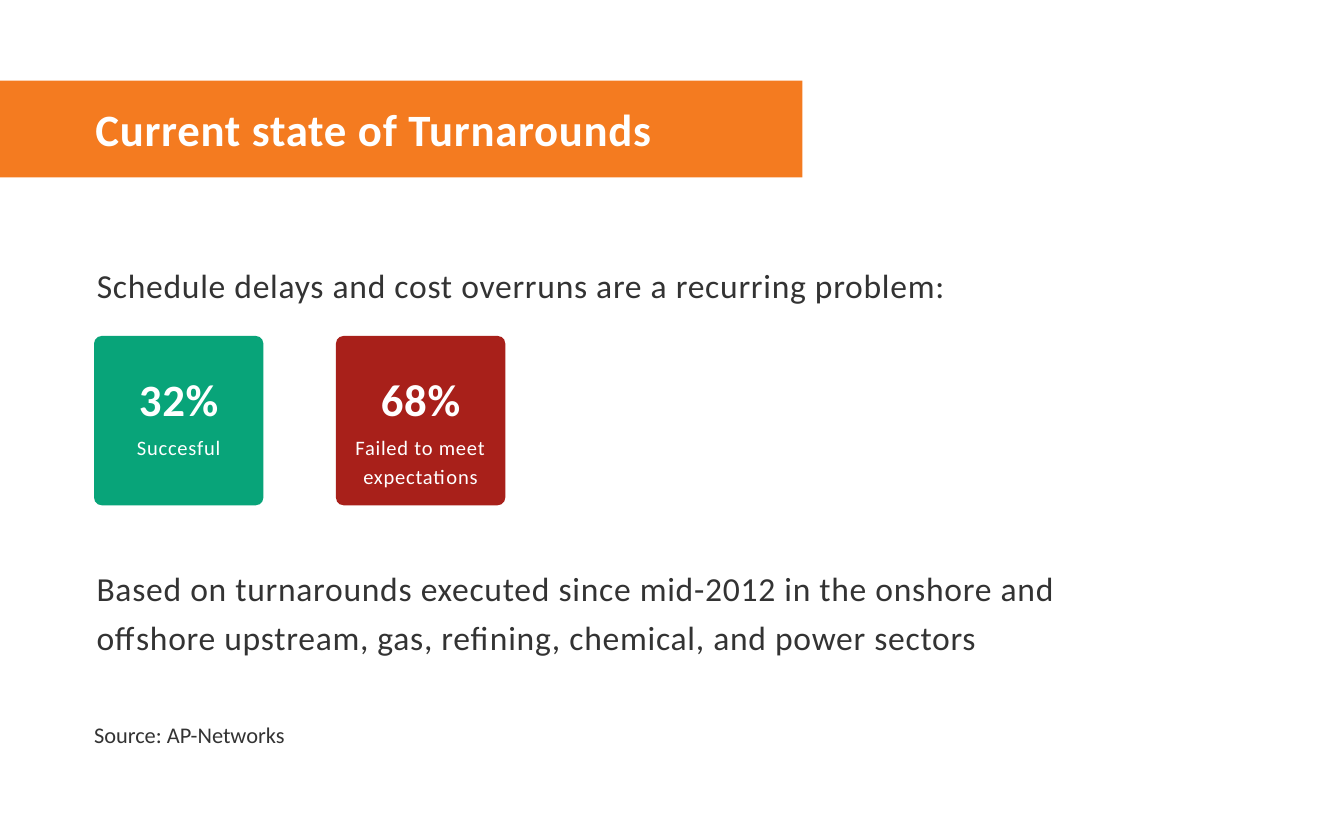
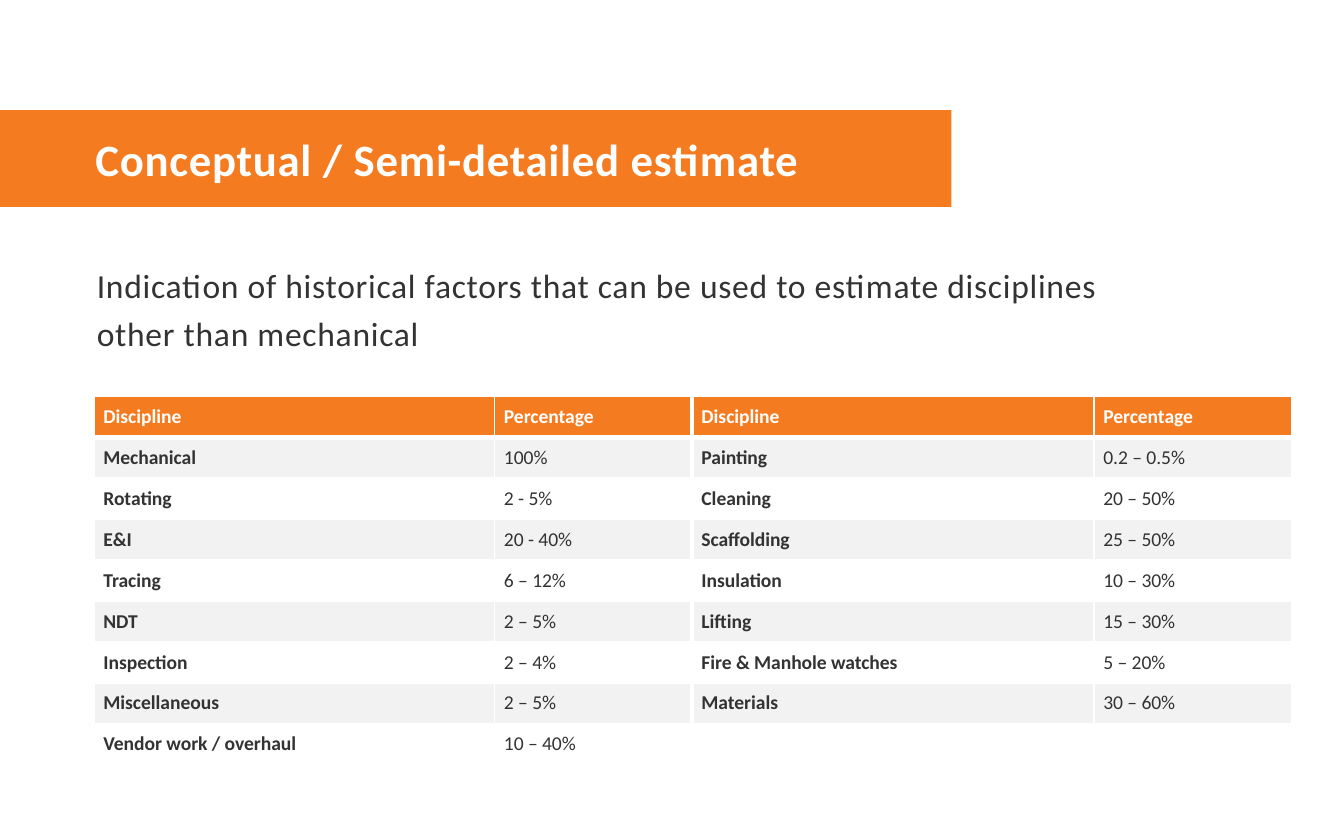
from dataclasses import dataclass

from lxml import etree
from pptx import Presentation
from pptx import util as u
from pptx.dml.color import RGBColor
from pptx.enum import shapes, text
from pptx.oxml.ns import qn

STATE = {
    "title": "Current state of Turnarounds",
    "intro": "Schedule delays and cost overruns are a recurring problem:",
    "cards": [("32%", "Succesful", "08A479"),
              ("68%", "Failed to meet expectations", "A8201A")],
    "basis": "Based on turnarounds executed since mid-2012 in the onshore and "
             "offshore upstream, gas, refining, chemical, and power sectors",
    "source": "Source: AP-Networks",
}
ESTIMATE = {
    "title": "Conceptual / Semi-detailed estimate",
    "intro": "Indication of historical factors that can be used to estimate "
             "disciplines other than mechanical",
    "rows": [
        ("Discipline", "Percentage", "Discipline", "Percentage"),
        ("Mechanical", "100%", "Painting", "0.2 – 0.5%"),
        ("Rotating", "2 - 5%", "Cleaning", "20 – 50%"),
        ("E&I", "20 - 40%", "Scaffolding", "25 – 50%"),
        ("Tracing", "6 – 12%", "Insulation", "10 – 30%"),
        ("NDT", "2 – 5%", "Lifting", "15 – 30%"),
        ("Inspection", "2 – 4%", "Fire & Manhole watches", "5 – 20%"),
        ("Miscellaneous", "2 – 5%", "Materials", "30 – 60%"),
        ("Vendor work / overhaul", "10 – 40%", "", ""),
    ],
}


@dataclass(frozen=True)
class Theme:
    font: str = "Calibri"
    accent: str = "F47B20"
    ink: str = "333333"
    paper: str = "FFFFFF"
    stripe: str = "F2F2F2"
    title: float = 24
    body: float = 18
    source: float = 12
    label: float = 11
    cell: float = 10.5
    spacing: str = "40"


T = Theme()
WIDTH, HEIGHT = 10, 6.25
MARGIN = 0.7
BODY_LEFT, BODY_TOP = 0.62, 1.86
BAND_HEIGHT = 0.72
CARD_TOP, CARD_SIZE, CARD_PITCH = 2.5, 1.26, 1.8
TABLE_TOP, TABLE_HEIGHT = 2.95, 2.74
COLUMNS = (2.98, 1.47, 2.99, 1.47)


def rgb(value):
    return RGBColor.from_string(value)


def place(sp, left, top, width, height):
    box = {"left": left, "top": top, "width": width, "height": height}
    for name, value in box.items():
        setattr(sp, name, u.Inches(value))


def set_frame(tf, wrap=True, insets=(0.1, 0.05, 0.1, 0.05),
              anchor=text.MSO_ANCHOR.TOP):
    left, top, right, bottom = map(u.Inches, insets)
    values = {"word_wrap": wrap, "auto_size": text.MSO_AUTO_SIZE.NONE,
              "vertical_anchor": anchor, "margin_left": left,
              "margin_top": top, "margin_right": right,
              "margin_bottom": bottom}
    for name, value in values.items():
        setattr(tf, name, value)


def write(p, words, size, color, bold=False, spaced=True, line=None,
          before=0, align=text.PP_ALIGN.LEFT):
    p.alignment = align
    p.space_before = u.Pt(before)
    if line:
        p.line_spacing = line
    r = p.add_run()
    r.text = words
    for name, value in {"name": T.font, "size": u.Pt(size),
                        "bold": bold}.items():
        setattr(r.font, name, value)
    r.font.color.rgb = rgb(color)
    if spaced:
        r._r.get_or_add_rPr().set("spc", T.spacing)


def add_title(s, words, top, width):
    sp = s.shapes.title
    place(sp, 0, top, width, BAND_HEIGHT)
    sp.fill.solid()
    sp.fill.fore_color.rgb = rgb(T.accent)
    set_frame(sp.text_frame, False, (0.71, 0.16, 0.98, 0.16),
              text.MSO_ANCHOR.MIDDLE)
    write(sp.text_frame.paragraphs[0], words, T.title, T.paper, bold=True)


def write_body(sp, words):
    set_frame(sp.text_frame)
    write(sp.text_frame.paragraphs[0], words, T.body, T.ink, line=1.2)


def add_body(s, words, width, height):
    sp = s.placeholders[1]
    place(sp, BODY_LEFT, BODY_TOP, width, height)
    pPr = sp.text_frame.paragraphs[0]._p.get_or_add_pPr()
    pPr.set("marL", "0")
    pPr.set("indent", "0")
    etree.SubElement(pPr, qn("a:buNone"))
    write_body(sp, words)


def add_textbox(s, left, top, width, height):
    return s.shapes.add_textbox(*map(u.Inches, (left, top, width, height)))


def add_card(s, column, figure, label, color):
    sp = s.shapes.add_shape(
        shapes.MSO_SHAPE.ROUNDED_RECTANGLE,
        u.Inches(MARGIN + column * CARD_PITCH), u.Inches(CARD_TOP),
        u.Inches(CARD_SIZE), u.Inches(CARD_SIZE))
    sp.adjustments[0] = 0.045
    sp.shadow.inherit = False
    sp.fill.solid()
    sp.fill.fore_color.rgb = rgb(color)
    sp.line.fill.background()
    tf = sp.text_frame
    set_frame(tf, insets=(0.1, 0.17, 0.1, 0.05))
    center = text.PP_ALIGN.CENTER
    write(tf.paragraphs[0], figure, T.title, T.paper, bold=True, line=1.2,
          align=center)
    write(tf.add_paragraph(), label, T.label, T.paper, line=1.2,
          before=T.label * 0.2, align=center)


def set_borders(cell, widths):
    """Draw paper-coloured edges; widths maps L, R, T, B to points."""
    tcPr = cell._tc.get_or_add_tcPr()
    for index, (side, width) in enumerate(widths.items()):
        ln = etree.Element(qn(f"a:ln{side}"), w=str(u.Pt(width)))
        fill = etree.SubElement(ln, qn("a:solidFill"))
        etree.SubElement(fill, qn("a:srgbClr"), val=T.paper)
        tcPr.insert(index, ln)


def format_cell(cell, row, column, words):
    header = row == 0
    cell.margin_left = cell.margin_right = u.Inches(0.07)
    cell.margin_top = cell.margin_bottom = u.Inches(0.04)
    cell.vertical_anchor = text.MSO_ANCHOR.MIDDLE
    cell.fill.solid()
    cell.fill.fore_color.rgb = rgb(
        T.accent if header else T.stripe if row % 2 else T.paper)
    set_borders(cell, {"L": 2.25 if column == 2 else 1,
                       "R": 2.25 if column == 1 else 1,
                       "T": 3 if row == 1 else 1,
                       "B": 3 if header else 1})
    p = cell.text_frame.paragraphs[0]
    if words:
        write(p, words, T.cell, T.paper if header else T.ink,
              bold=header or column % 2 == 0, spaced=False)
    else:
        etree.SubElement(p._p, qn("a:endParaRPr"), sz=str(int(T.cell * 100)))


def add_factor_table(s, rows):
    frame = s.shapes.add_table(
        len(rows), len(COLUMNS), u.Inches(MARGIN), u.Inches(TABLE_TOP),
        u.Inches(sum(COLUMNS)), u.Inches(TABLE_HEIGHT))
    table = frame.table
    table.horz_banding = False
    for column, width in zip(table.columns, COLUMNS):
        column.width = u.Inches(width)
    for i, row in enumerate(rows):
        for j, words in enumerate(row):
            format_cell(table.cell(i, j), i, j, words)


def build_state(s):
    add_title(s, STATE["title"], 0.6, 5.97)
    add_body(s, STATE["intro"], 7.8, 0.72)
    for column, card in enumerate(STATE["cards"]):
        add_card(s, column, *card)
    write_body(add_textbox(s, BODY_LEFT, 4.12, 7.8, 1.14), STATE["basis"])
    tf = add_textbox(s, MARGIN, 5.32, 1.54, 0.3).text_frame
    set_frame(tf, False, (0, 0.05, 0.1, 0.05))
    write(tf.paragraphs[0], STATE["source"], T.source, T.ink, spaced=False)


def build_estimate(s):
    add_title(s, ESTIMATE["title"], 0.82, 7.08)
    add_body(s, ESTIMATE["intro"], 7.98, 3.78)
    add_factor_table(s, ESTIMATE["rows"])


def main():
    prs = Presentation()
    prs.slide_width, prs.slide_height = u.Inches(WIDTH), u.Inches(HEIGHT)
    for build in (build_state, build_estimate):
        build(prs.slides.add_slide(prs.slide_layouts[1]))
    prs.save("out.pptx")


if __name__ == "__main__":
    main()
